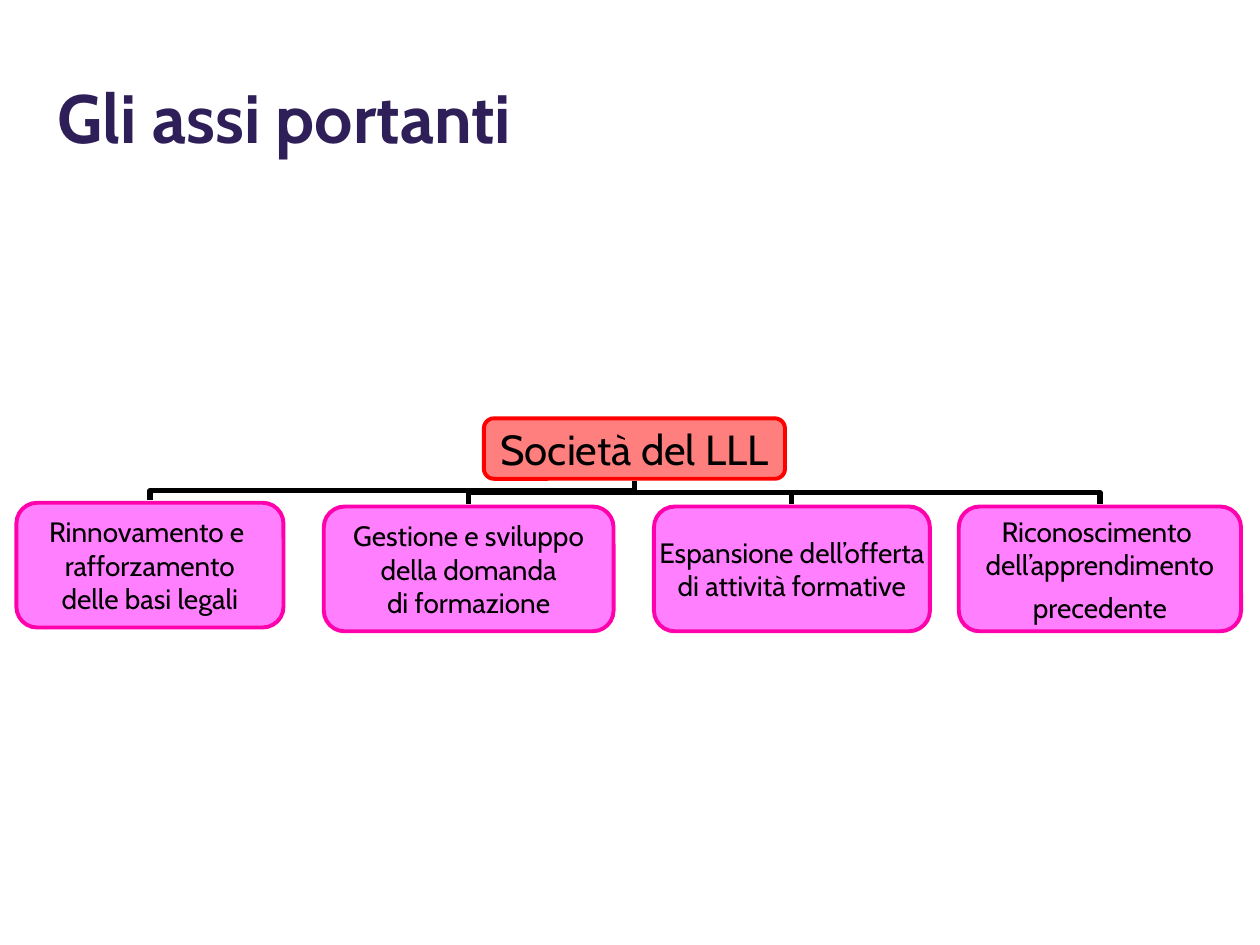
import dataclasses

import lxml.etree
import pptx
import pptx.dml.color
import pptx.enum.shapes
import pptx.enum.text
import pptx.oxml.ns
import pptx.util
from pptx.util import Inches


@dataclasses.dataclass(frozen=True)
class Theme:
    """Colours, font and type sizes of the slide."""
    font: str = "Cabin"
    title: str = "2F1F58"
    text: str = "000000"
    root_fill: str = "FF0000"
    root_line: str = "FF0000"
    pillar_fill: str = "FF00FF"
    pillar_line: str = "FF00AD"
    link: str = "000000"
    title_size: int = 39
    root_size: int = 24
    pillar_size: int = 16
    border: float = 2.25
    link_width: int = 3


THEME = Theme()
TITLE_BOX = (0.36, 0.3, 9, 1.25)
ROOT_BOX = (3.84, 3.32, 2.39, 0.48)
PILLARS = [
    ((0.13, 3.99, 2.12, 0.99), "Rinnovamento e \nrafforzamento\ndelle basi legali"),
    ((2.57, 4.02, 2.3, 0.99), "Gestione e sviluppo\ndella domanda\ndi formazione"),
    ((5.19, 4.02, 2.19, 0.99), "Espansione dell’offerta\ndi attività formative"),
    ((7.61, 4.02, 2.24, 0.99), "Riconoscimento \ndell’apprendimento\nprecedente"),
]


def rgb(value):
    """Turn a hex string into a colour."""
    return pptx.dml.color.RGBColor.from_string(value)


def format_runs(frame, size, color, bold=False):
    """Apply the slide font to every run of a text frame."""
    for paragraph in frame.paragraphs:
        for run in paragraph.runs:
            run.font.name = THEME.font
            run.font.size = pptx.util.Pt(size)
            run.font.bold = bold
            run.font.color.rgb = rgb(color)


def place_title(slide, box, wording):
    """Move, fill and format the title placeholder."""
    title = slide.shapes.title
    title.left, title.top, title.width, title.height = map(Inches, box)
    frame = title.text_frame
    frame.text = wording
    frame.auto_size = pptx.enum.text.MSO_AUTO_SIZE.NONE
    frame.vertical_anchor = pptx.enum.text.MSO_ANCHOR.MIDDLE
    frame.paragraphs[0].alignment = pptx.enum.text.PP_ALIGN.LEFT
    format_runs(frame, THEME.title_size, THEME.title, bold=True)


def place_node(slide, box, wording, size, fill, line):
    """Draw a half-transparent rounded node with centred text."""
    node = slide.shapes.add_shape(
        pptx.enum.shapes.MSO_SHAPE.ROUNDED_RECTANGLE, *map(Inches, box))
    node.shadow.inherit = False
    node.fill.solid()
    node.fill.fore_color.rgb = rgb(fill)
    color = node.element.spPr.find(".//" + pptx.oxml.ns.qn("a:srgbClr"))
    lxml.etree.SubElement(color, pptx.oxml.ns.qn("a:alpha"), val="50000")
    node.line.color.rgb = rgb(line)
    node.line.width = pptx.util.Pt(THEME.border)
    frame = node.text_frame
    frame.margin_left = frame.margin_right = 0
    frame.margin_top = frame.margin_bottom = 0
    frame.word_wrap = False
    frame.vertical_anchor = pptx.enum.text.MSO_ANCHOR.MIDDLE
    frame.text = wording
    for paragraph in frame.paragraphs:
        paragraph.alignment = pptx.enum.text.PP_ALIGN.CENTER
    format_runs(frame, size, THEME.text)
    return node


def place_link(slide, root_box, pillar_box):
    """Draw an elbow from the top of a pillar to the bottom of the root."""
    root_x = root_box[0] + root_box[2] / 2
    root_y = root_box[1] + root_box[3] + 0.02
    pillar_x = pillar_box[0] + pillar_box[2] / 2
    pillar_y = pillar_box[1] - 0.02
    drop, span = pillar_y - root_y, abs(pillar_x - root_x)
    left = (root_x + pillar_x - drop) / 2
    top = (root_y + pillar_y - span) / 2
    link = slide.shapes.add_connector(
        pptx.enum.shapes.MSO_CONNECTOR.ELBOW,
        *map(Inches, (left, top, left + drop, top + span)))
    xfrm = link.element.spPr.find(pptx.oxml.ns.qn("a:xfrm"))
    if pillar_x > root_x:
        xfrm.set("rot", str(90 * 60000))
        xfrm.set("flipH", "1")
    else:
        xfrm.set("rot", str(270 * 60000))
    link.line.color.rgb = rgb(THEME.link)
    link.line.width = pptx.util.Pt(THEME.link_width)
    lxml.etree.SubElement(link.element.spPr, pptx.oxml.ns.qn("a:effectLst"))


def place_tree(slide, root_box, root_wording, pillars):
    """Draw the links, the root and the pillars below it."""
    for box, _ in reversed(pillars):
        place_link(slide, root_box, box)
    place_node(slide, root_box, root_wording, THEME.root_size,
               THEME.root_fill, THEME.root_line)
    nodes = [place_node(slide, box, wording, THEME.pillar_size,
                        THEME.pillar_fill, THEME.pillar_line)
             for box, wording in pillars]
    nodes[-1].text_frame.paragraphs[-1].space_before = pptx.util.Pt(5)


def main():
    """Build and save the slide."""
    deck = pptx.Presentation()
    deck.slide_width, deck.slide_height = Inches(10), Inches(7.5)
    slide = deck.slides.add_slide(deck.slide_layouts.get_by_name("Title Only"))
    place_tree(slide, ROOT_BOX, "Società del LLL", PILLARS)
    place_title(slide, TITLE_BOX, "Gli assi portanti")
    deck.save("out.pptx")


if __name__ == "__main__":
    main()
